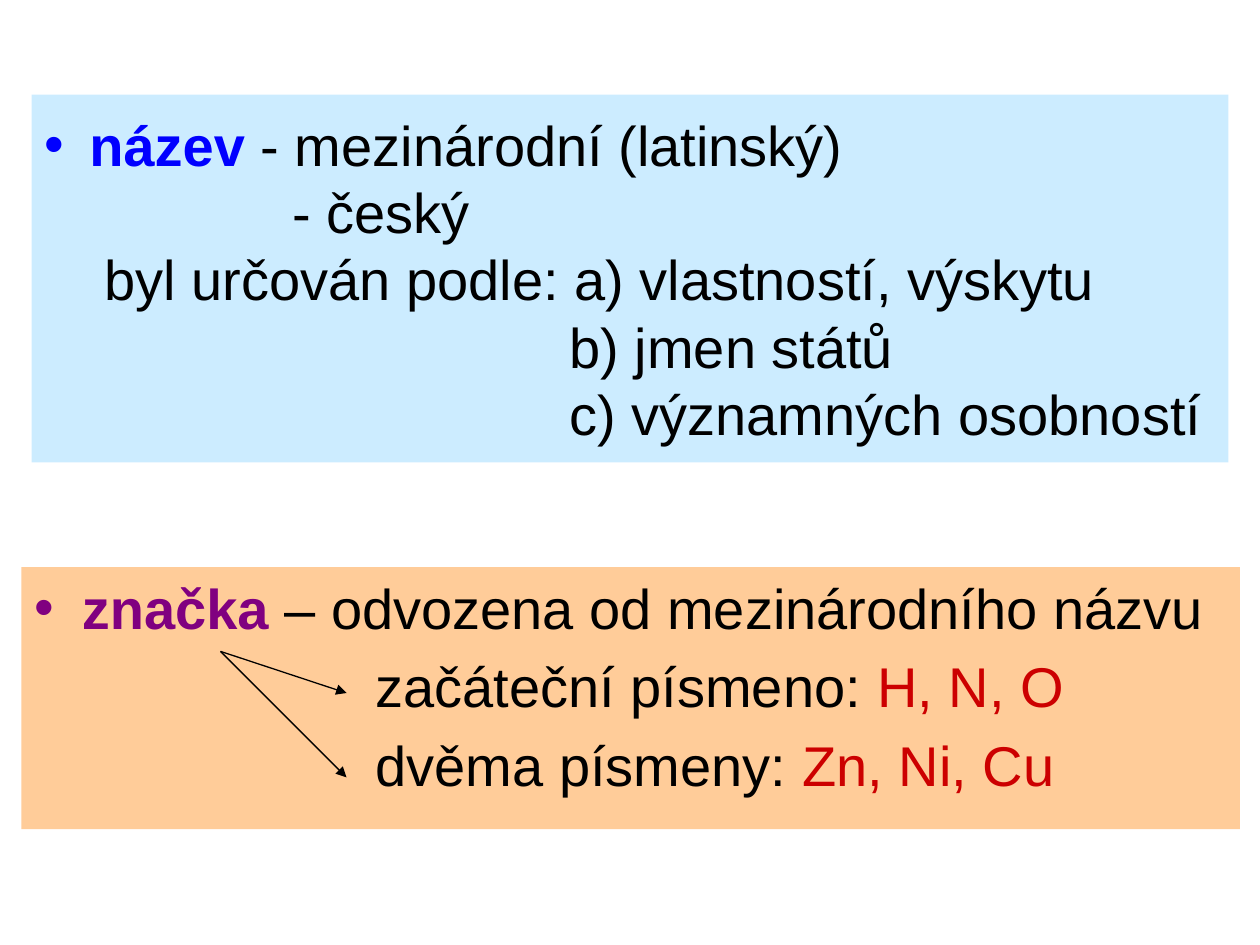
import pptx
import pptx.dml.color
import pptx.enum.shapes
import pptx.enum.text
import pptx.oxml.ns
import pptx.util
from lxml import etree
from pptx.util import Inches, Pt

COLORS = {
    "sky": "CCECFF",
    "peach": "FFCC99",
    "blue": "0000FF",
    "purple": "800080",
    "red": "CC0000",
    "black": "000000",
}
qn = pptx.oxml.ns.qn


def rgb(name):
    return pptx.dml.color.RGBColor.from_string(COLORS[name])


def fill_panel(panel, box, fill, anchor, space_before, lines):
    """Place a placeholder and write lines of (left margin, bulleted, runs)."""
    panel.left, panel.top, panel.width, panel.height = [Inches(n) for n in box]
    panel.fill.solid()
    panel.fill.fore_color.rgb = rgb(fill)
    frame = panel.text_frame
    frame.word_wrap = True
    frame.auto_size = pptx.enum.text.MSO_AUTO_SIZE.NONE
    frame.vertical_anchor = anchor
    frame.text = "\n".join("".join(run[0] for run in runs) for _, _, runs in lines)
    for paragraph, (margin, bulleted, runs) in zip(frame.paragraphs, lines):
        paragraph.alignment = pptx.enum.text.PP_ALIGN.LEFT
        paragraph.line_spacing = Pt(38.4)
        paragraph.space_before = Pt(space_before)
        properties = paragraph._p.get_or_add_pPr()
        properties.set("marL", str(Inches(margin)))
        properties.set("indent", str(-Inches(margin) if bulleted else 0))
        if bulleted:
            etree.SubElement(properties, qn("a:buFont"), typeface="Arial")
            etree.SubElement(properties, qn("a:buChar"), char="•")
        else:
            etree.SubElement(properties, qn("a:buNone"))
        paragraph.runs[0].text = runs[0][0]
        for words, _, _ in runs[1:]:
            paragraph.add_run().text = words
        for run, (_, color, bold) in zip(paragraph.runs, runs):
            run.font.name = "Arial"
            run.font.size = Pt(32)
            run.font.bold = bold
            run.font.color.rgb = rgb(color)


deck = pptx.Presentation()
deck.slide_width, deck.slide_height = Inches(10), Inches(7.5)
slide = deck.slides.add_slide(deck.slide_layouts[1])

name_lines = [
    (0.36, True, [("název ", "blue", True),
                  ("- mezinárodní (latinský)", "black", False)]),
    (1.97, False, [("- český", "black", False)]),
    (0.48, False, [("byl určován podle: a) vlastností, výskytu", "black", False)]),
    (4.17, False, [("b) jmen států", "black", False)]),
    (4.17, False, [("c) významných osobností", "black", False)]),
]
symbol_lines = [
    (0.38, True, [("značka ", "purple", True),
                  ("– odvozena od mezinárodního názvu", "black", False)]),
    (2.71, False, [("začáteční písmeno: ", "black", False),
                   ("H, N, O", "red", False)]),
    (2.71, False, [("dvěma písmeny: ", "black", False),
                   ("Zn, Ni, Cu", "red", False)]),
]
fill_panel(slide.shapes.title, (0.25, 0.75, 9.5, 2.92), "sky",
           pptx.enum.text.MSO_ANCHOR.MIDDLE, 0, name_lines)
fill_panel(slide.placeholders[1], (0.17, 4.5, 9.67, 2.08), "peach",
           pptx.enum.text.MSO_ANCHOR.TOP, 6.4, symbol_lines)

for arrow_end in (5.5, 6.17):
    arrow = slide.shapes.add_connector(
        pptx.enum.shapes.MSO_CONNECTOR.STRAIGHT,
        Inches(1.75), Inches(5.17), Inches(2.75), Inches(arrow_end))
    arrow.line.color.rgb = rgb("black")
    arrow.line.width = Pt(0.75)
    etree.SubElement(arrow.line._get_or_add_ln(), qn("a:tailEnd"), type="triangle")
    etree.SubElement(arrow._element.spPr, qn("a:effectLst"))

deck.save("out.pptx")
